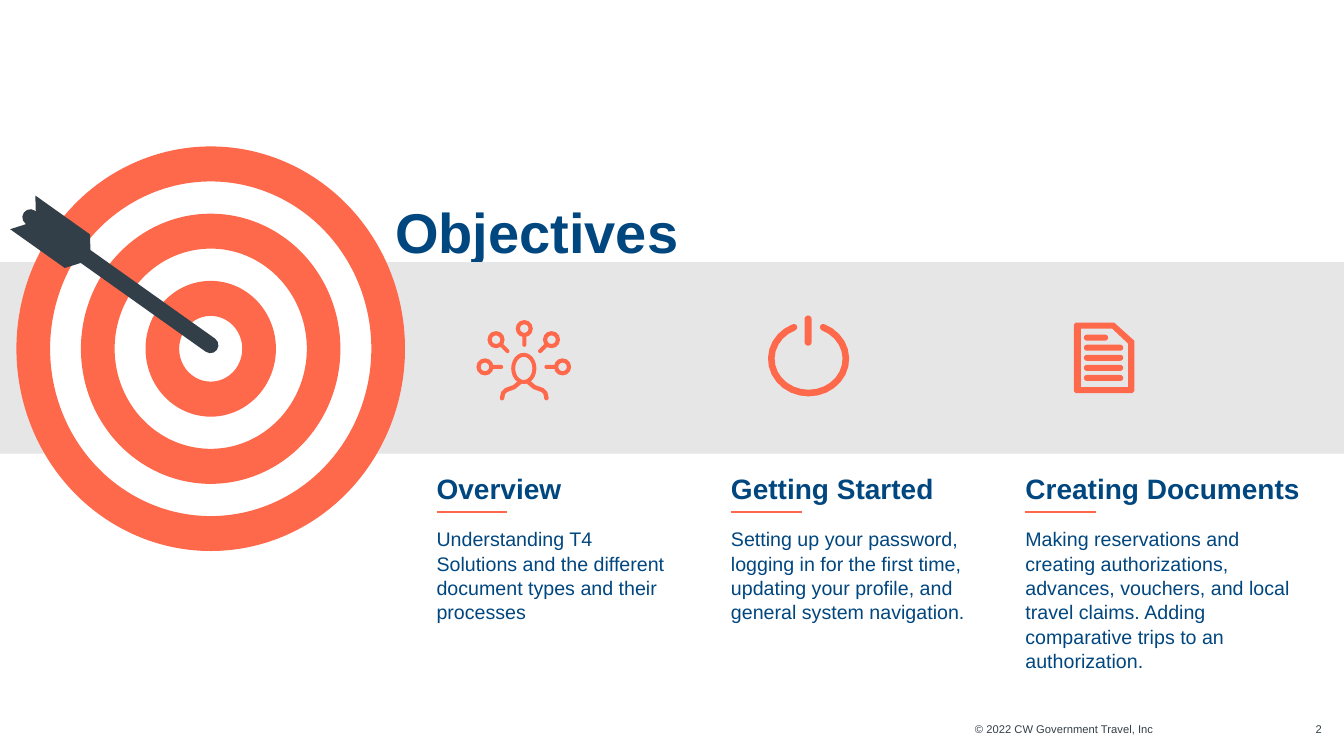
"""Build the Objectives slide with a target, a band of icons and three topics."""
from math import atan2, cos, degrees, radians, sin

from lxml.etree import SubElement
from pptx import Presentation
from pptx.dml.color import RGBColor
from pptx.enum.shapes import MSO_CONNECTOR, MSO_SHAPE
from pptx.enum.text import MSO_ANCHOR, PP_ALIGN
from pptx.oxml.ns import qn
from pptx.util import Inches, Pt

CORAL = RGBColor(0xFF, 0x69, 0x4B)
NAVY = RGBColor(0x00, 0x46, 0x7F)
SLATE = RGBColor(0x33, 0x3F, 0x48)
GREY = RGBColor(0xE7, 0xE6, 0xE6)
WHITE = RGBColor(0xFF, 0xFF, 0xFF)

TOPICS = [
    (4.33, 2.33, "Overview",
     "Understanding T4 Solutions and the different document types and their processes"),
    (7.25, 2.33, "Getting Started",
     "Setting up your password, logging in for the first time, updating your profile, "
     "and general system navigation."),
    (10.17, 2.71, "Creating Documents",
     "Making reservations and creating authorizations, advances, vouchers, and local "
     "travel claims. Adding comparative trips to an authorization."),
]


def arc(center_x, center_y, radius_x, radius_y, start, end, steps):
    """Return points along an elliptical arc, with angles in degrees."""
    angles = [radians(start + (end - start) * step / steps) for step in range(steps + 1)]
    return [(center_x + radius_x * cos(a), center_y + radius_y * sin(a)) for a in angles]


def stroke(line, half):
    """Return the outline of a round-ended stroke along a line of points."""
    headings = []
    for index in range(len(line)):
        before = line[max(index - 1, 0)]
        after = line[min(index + 1, len(line) - 1)]
        headings.append(atan2(after[1] - before[1], after[0] - before[0]))
    left, right = ([(x + side * half * sin(heading), y - side * half * cos(heading))
                    for (x, y), heading in zip(line, headings)] for side in (1, -1))
    first, last = degrees(headings[0]), degrees(headings[-1])
    return (left + arc(*line[-1], half, half, last - 90, last + 90, 4)[1:-1]
            + right[::-1] + arc(*line[0], half, half, first + 90, first + 270, 4)[1:-1])


def write(shape, text, size=14, color=NAVY, bold=False, align=PP_ALIGN.LEFT, spacing=1.0):
    """Put formatted text into a shape without margins."""
    frame = shape.text_frame
    frame.word_wrap = True
    frame.vertical_anchor = MSO_ANCHOR.TOP
    frame.margin_left = frame.margin_right = frame.margin_top = frame.margin_bottom = 0
    paragraph = frame.paragraphs[0]
    paragraph.alignment = align
    paragraph.line_spacing = spacing
    paragraph.space_before = Pt(0)
    run = paragraph.add_run()
    run.text = text
    run.font.name = "Arial"
    run.font.size = Pt(size)
    run.font.bold = bold
    run.font.color.rgb = color


class Board:
    """Hold the current slide and draw each kind of element on it."""

    def __init__(self, slide):
        """Start drawing on the slide."""
        self.slide = slide
        self.shapes = slide.shapes

    def paint(self, shape, fill, line=None):
        """Give a shape a flat fill and an optional thin line."""
        shape.shadow.inherit = False
        shape.fill.solid()
        shape.fill.fore_color.rgb = fill
        if line is None:
            shape.line.fill.background()
        else:
            shape.line.color.rgb = line
            shape.line.width = Pt(1)

    def title(self, text, left, top, width, height):
        """Move the title placeholder and fill it."""
        title = self.shapes.title
        title.left, title.top = Inches(left), Inches(top)
        title.width, title.height = Inches(width), Inches(height)
        write(title, text, size=40, bold=True, spacing=1.08)

    def text(self, text, left, top, width, height, **style):
        """Add a text box."""
        box = self.shapes.add_textbox(*map(Inches, (left, top, width, height)))
        write(box, text, **style)

    def preset(self, kind, left, top, width, height, fill=CORAL, line=None,
               rotation=0, adjustment=None, flips=()):
        """Add a preset shape."""
        shape = self.shapes.add_shape(kind, *map(Inches, (left, top, width, height)))
        self.paint(shape, fill, line)
        shape.rotation = rotation
        if adjustment is not None:
            shape.adjustments[0] = adjustment
        for flip in flips:
            shape.element.spPr.get_or_add_xfrm().set(flip, "1")

    def bar(self, left, top, width, height, **style):
        """Add a bar with fully round ends."""
        self.preset(MSO_SHAPE.ROUNDED_RECTANGLE, left, top, width, height,
                    adjustment=0.5, **style)

    def outline(self, *contours):
        """Add a coral freeform, where inner contours are holes."""
        builder = None
        for contour in contours:
            points = [(Inches(x), Inches(y)) for x, y in contour]
            if builder is None:
                builder = self.shapes.build_freeform(*points[0])
            else:
                builder.move_to(*points[0])
            builder.add_line_segments(points[1:], close=True)
        self.paint(builder.convert_to_shape(), CORAL)

    def rule(self, left, top, length):
        """Add a coral horizontal line."""
        line = self.shapes.add_connector(
            MSO_CONNECTOR.STRAIGHT, *map(Inches, (left, top, left + length, top)))
        line.line.color.rgb = CORAL
        line.line.width = Pt(1.5)
        SubElement(line.element.spPr, qn("a:effectLst"))

    def target(self):
        """Draw the rings and the arrow that hits them."""
        for ring in range(6):
            width, height = 0.64 * (6 - ring), 4 / 6 * (6 - ring)
            self.preset(MSO_SHAPE.OVAL, 2.09 - width / 2, 3.46 - height / 2, width, height,
                        fill=WHITE if ring % 2 else CORAL, line=CORAL)
        self.bar(0.02, 2.71, 2.35, 0.16, fill=SLATE, rotation=35.4, flips=("flipH",))
        for left, top, flips in ((0.24, 2.15, ("flipH",)), (0.07, 2.37, ("flipH", "flipV"))):
            self.preset(MSO_SHAPE.PARALLELOGRAM, left, top, 0.77, 0.14, fill=SLATE,
                        rotation=35.4, adjustment=0.753, flips=flips)

    def node(self, center_x, center_y, angle):
        """Draw a ring with a stem that points at the angle."""
        self.preset(MSO_SHAPE.DONUT, center_x - 0.085, center_y - 0.085, 0.17, 0.17,
                    adjustment=0.25)
        stem_x = center_x + 0.12 * cos(radians(angle))
        stem_y = center_y + 0.12 * sin(radians(angle))
        self.bar(stem_x - 0.06, stem_y - 0.02, 0.12, 0.04, rotation=angle)

    def person_icon(self):
        """Draw a person with five nodes around the head."""
        for center_x, center_y, angle in ((4.81, 3.64, 0), (4.92, 3.37, 45), (5.2, 3.26, 90),
                                          (5.47, 3.37, 135), (5.58, 3.64, 180)):
            self.node(center_x, center_y, angle)
        self.preset(MSO_SHAPE.DONUT, 5.07, 3.5, 0.25, 0.31, adjustment=0.16)
        shoulder = [(-0.22, 3.95), (-0.21, 3.9), (-0.18, 3.87), (-0.1, 3.84), (-0.04, 3.79)]
        for side in (1, -1):
            self.outline(stroke([(5.2 + side * x, y) for x, y in shoulder], 0.022))

    def power_icon(self):
        """Draw a power button."""
        self.outline(stroke(arc(8.02, 3.56, 0.37, 0.34, -67, 247, 24), 0.033))
        self.bar(7.98, 3.13, 0.07, 0.3)

    def document_icon(self):
        """Draw a page with a cut corner and five lines of text."""
        self.outline([(10.65, 3.22), (10.67, 3.2), (11.05, 3.2), (11.25, 3.38),
                      (11.25, 3.88), (11.23, 3.9), (10.67, 3.9), (10.65, 3.88)],
                     [(10.72, 3.26), (11.03, 3.26), (11.19, 3.41), (11.19, 3.84), (10.72, 3.84)])
        for row in range(5):
            self.bar(10.75, 3.32 + 0.1 * row, 0.39 if row else 0.24, 0.06)

    def topic(self, left, width, heading, description):
        """Add a heading, its rule and its description."""
        self.text(heading, left, 4.64, 2.75, 0.47, size=20, bold=True, spacing=1.1)
        self.text(description, left, 5.22, width, 1.7, spacing=1.04)
        self.rule(left, 5.08, 0.7)


def main():
    """Build and save the presentation."""
    presentation = Presentation()
    presentation.slide_width, presentation.slide_height = Inches(13.33), Inches(7.5)
    board = Board(presentation.slides.add_slide(presentation.slide_layouts[5]))
    board.text("© 2022 CW Government Travel, Inc", 8.38, 7.17, 3.06, 0.14,
               size=8, color=SLATE, align=PP_ALIGN.RIGHT)
    board.text("2", 12.88, 7.17, 0.23, 0.14, size=8, color=SLATE, align=PP_ALIGN.RIGHT)
    board.preset(MSO_SHAPE.RECTANGLE, 0, 2.6, 13.33, 1.9, fill=GREY)
    board.target()
    board.title("Objectives", 3.92, 1.91, 3.92, 0.52)
    board.person_icon()
    board.power_icon()
    board.document_icon()
    for topic in TOPICS:
        board.topic(*topic)
    presentation.save("out.pptx")


if __name__ == "__main__":
    main()
